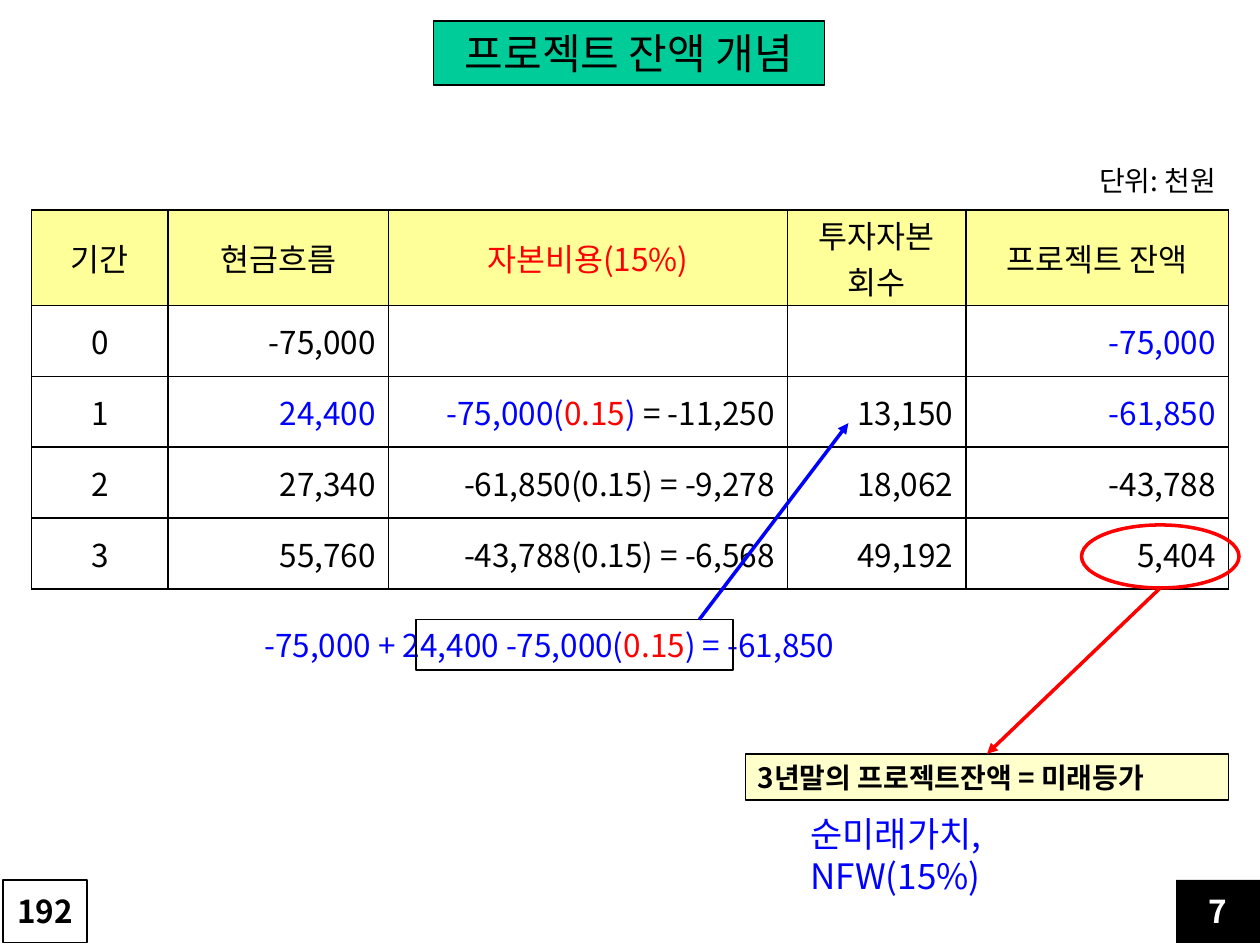
from lxml.etree import SubElement
from pptx import Presentation
from pptx.dml.color import RGBColor
from pptx.enum.shapes import MSO_CONNECTOR, MSO_SHAPE
from pptx.enum.text import MSO_ANCHOR, PP_ALIGN
from pptx.oxml import parse_xml
from pptx.oxml.ns import nsdecls, qn
from pptx.util import Inches, Pt

FONT = "Noto Sans CJK KR"
COLORS = {
    "black": "000000", "white": "FFFFFF", "blue": "0000FF", "red": "FF0000",
    "green": "00CC99", "header": "FFFF99", "note": "FFFFCC",
}
ALIGN = {"l": PP_ALIGN.LEFT, "c": PP_ALIGN.CENTER, "r": PP_ALIGN.RIGHT, "j": PP_ALIGN.JUSTIFY}
UNITS_PER_INCH = 12

TITLE = [("프로젝트 잔액 개념", "black")]
UNIT = [("단위: 천원", "black")]
FUTURE_VALUE = [("순미래가치,\vNFW(15%)", "blue")]
NOTE = [("3년말의 프로젝트잔액 = 미래등가", "black")]
FORMULA = [("-75,000 + 24,400 -75,000(", "blue"), ("0.15", "red"), (") = -61,850", "blue")]
INTEREST = [("-75,000(", "blue"), ("0.15", "red"), (")", "blue"), (" = -11,250", "black")]

COLUMNS = [13, 21, 38, 17, 25]
ROWS = [9.1] + [6.75] * 4
CELLS = [
    ["기간", "현금흐름", [("자본비용(15%)", "red")], "투자자본 회수", "프로젝트 잔액"],
    ["0", "-75,000", "", "", [("-75,000", "blue")]],
    ["1", [("24,400", "blue")], INTEREST, "13,150", [("-61,850", "blue")]],
    ["2", "27,340", "-61,850(0.15) = -9,278", "18,062", "-43,788"],
    ["3", "55,760", "-43,788(0.15) = -6,568", "49,192", "5,404"],
]


def grid(*units):
    return [Inches(u / UNITS_PER_INCH) for u in units]


def rgb(name):
    return RGBColor.from_string(COLORS[name])


def write(tf, runs, size, align="l", bold=False):
    p = tf.paragraphs[0]
    p.alignment = ALIGN[align]
    for text, color in runs:
        for i, line in enumerate(text.split("\v")):
            if i:
                p.add_line_break()
            r = p.add_run()
            r.text = line
            r.font.size = Pt(size)
            r.font.bold = bold
            r.font.color.rgb = rgb(color)
            r.font.name = FONT
            SubElement(r.font._element, qn("a:ea"), typeface=FONT)


def add_text(slide, box, runs, size, align="l", anchor=MSO_ANCHOR.MIDDLE):
    tf = slide.shapes.add_textbox(*grid(*box)).text_frame
    tf.word_wrap = True
    tf.vertical_anchor = anchor
    write(tf, runs, size, align)


def add_box(slide, box, fill=None, line="black", width=0.75, kind=MSO_SHAPE.RECTANGLE,
            runs=(), size=18, align="c", bold=False):
    s = slide.shapes.add_shape(kind, *grid(*box))
    s.shadow.inherit = False
    if fill:
        s.fill.solid()
        s.fill.fore_color.rgb = rgb(fill)
    else:
        s.fill.background()
    if line:
        s.line.color.rgb = rgb(line)
        s.line.width = Pt(width)
    else:
        s.line.fill.background()
    tf = s.text_frame
    tf.word_wrap = True
    tf.vertical_anchor = MSO_ANCHOR.MIDDLE
    write(tf, runs, size, align, bold)
    return s


def add_arrow(slide, start, end, color):
    c = slide.shapes.add_connector(MSO_CONNECTOR.STRAIGHT, *grid(*start, *end))
    c.line.color.rgb = rgb(color)
    c.line.width = Pt(2)
    SubElement(c.line._get_or_add_ln(), qn("a:tailEnd"), type="triangle")
    SubElement(c._element.spPr, qn("a:effectLst"))
    return c


def add_borders(cell):
    tcPr = cell._tc.get_or_add_tcPr()
    for i, side in enumerate("LRTB"):
        tcPr.insert(i, parse_xml(
            f'<a:ln{side} {nsdecls("a")} w="{Pt(1)}"><a:solidFill>'
            f'<a:srgbClr val="{COLORS["black"]}"/></a:solidFill></a:ln{side}>'))


def add_balance_table(slide):
    frame = slide.shapes.add_table(len(ROWS), len(COLUMNS),
                                   *grid(3, 20, sum(COLUMNS), sum(ROWS)))
    table = frame.table
    for column, width in zip(table.columns, grid(*COLUMNS)):
        column.width = width
    for row, height in zip(table.rows, grid(*ROWS)):
        row.height = height
    for i, values in enumerate(CELLS):
        for j, value in enumerate(values):
            cell = table.cell(i, j)
            cell.vertical_anchor = MSO_ANCHOR.MIDDLE
            cell.margin_top = cell.margin_bottom = 0
            if i == 0:
                cell.fill.solid()
                cell.fill.fore_color.rgb = rgb("header")
            else:
                cell.fill.background()
            add_borders(cell)
            if value:
                runs = [(value, "black")] if isinstance(value, str) else value
                write(cell.text_frame, runs, 18, "c" if i == 0 or j == 0 else "r")


def main():
    prs = Presentation()
    prs.slide_width, prs.slide_height = grid(120, 90)
    slide = prs.slides.add_slide(prs.slide_layouts[6])

    add_text(slide, (76, 76.8, 36.2, 5.3), FUTURE_VALUE, 20, anchor=MSO_ANCHOR.TOP)
    add_text(slide, (99, 15, 18, 4.4), UNIT, 16, "r")
    add_box(slide, (41.3, 2, 37.2, 6.1), "green", runs=TITLE, size=24)
    add_balance_table(slide)
    note = add_box(slide, (71, 71.8, 46, 4.4), "note", runs=NOTE, size=16, align="l", bold=True)
    add_box(slide, (103, 50, 15, 6), line="red", width=2, kind=MSO_SHAPE.OVAL)
    add_arrow(slide, (110.5, 56), (94, 71.8), "red").end_connect(note, 0)
    add_text(slide, (24, 59, 66.2, 4.8), FORMULA, 18, "j")
    add_box(slide, (112, 83.8, 8, 6), "black", None, runs=[("7", "white")], bold=True)
    add_box(slide, (0.3, 83.8, 8, 6), "white", runs=[("192", "black")], bold=True)
    add_box(slide, (39.6, 59, 30.2, 4.8), width=1)
    add_arrow(slide, (66.6, 59), (80.8, 40.3), "blue")

    prs.save("out.pptx")


if __name__ == "__main__":
    main()
